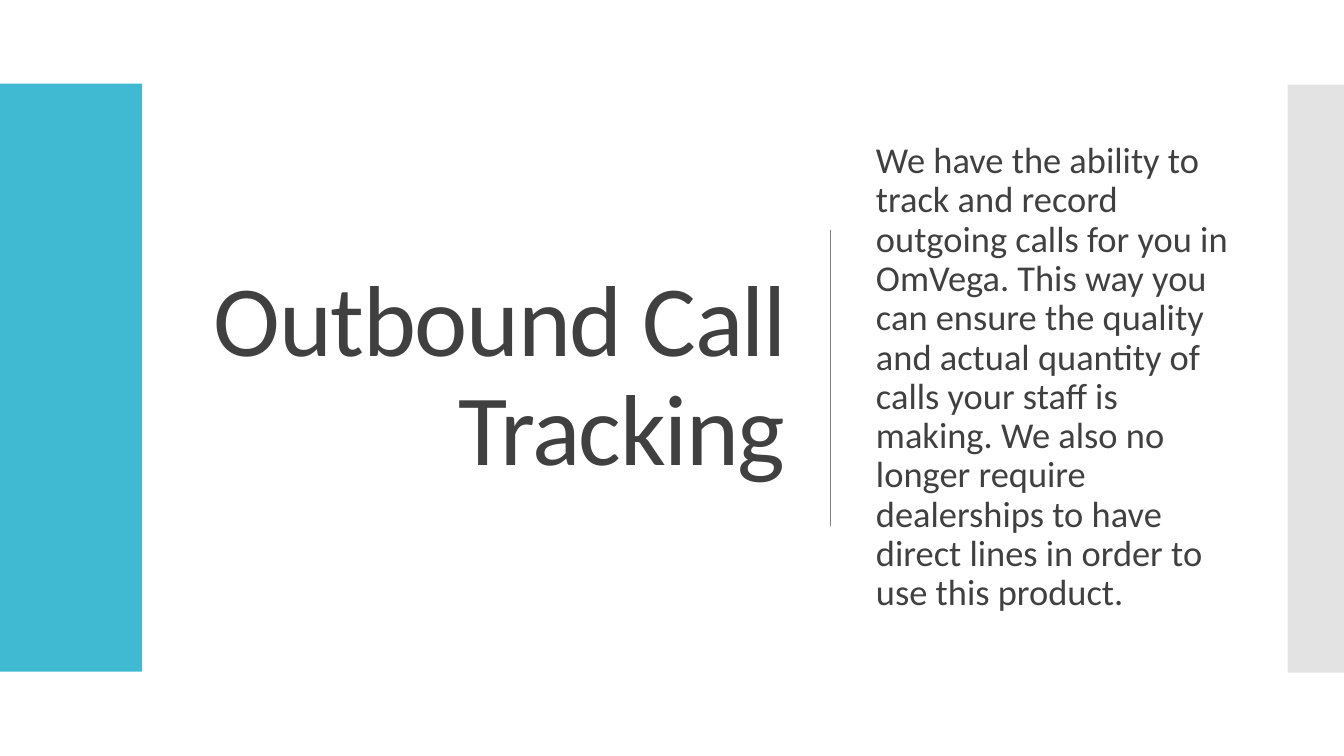
from lxml.etree import SubElement
from pptx import Presentation
from pptx.dml.color import RGBColor
from pptx.enum.shapes import MSO_CONNECTOR, MSO_SHAPE
from pptx.enum.text import MSO_ANCHOR, PP_ALIGN
from pptx.oxml.ns import qn
from pptx.util import Inches, Pt

HEADING = "Outbound Call Tracking"
BODY = (
    "We have the ability to track and record outgoing calls for you in OmVega. "
    "This way you can ensure the quality and actual quantity of calls your staff "
    "is making. We also no longer require dealerships to have direct lines in "
    "order to use this product."
)
COLORS = {"accent": "40BAD2", "side": "C8C8C8", "text": "404040", "rule": "808080"}
FONT = "Calibri"

WIDTH, HEIGHT = Inches(13.33), Inches(7.5)
BAND_HEIGHT = HEIGHT * 7 / 9
TEXT_HEIGHT = Inches(5.13)
TEXT_TOP = (HEIGHT - TEXT_HEIGHT) / 2
RULE_X, RULE_HEIGHT = Inches(8.24), Inches(2.94)
RULE_TOP = (HEIGHT - RULE_HEIGHT) / 2
SIDE_WIDTH = Inches(0.56)
BANDS = [
    (0, Inches(0.83), Inches(1.41), "accent", 100),
    (WIDTH - SIDE_WIDTH, Inches(0.84), SIDE_WIDTH, "side", 50),
]


def add_text(slide, text, left, width, size, align=PP_ALIGN.LEFT, before=0, spacing=0):
    box = slide.shapes.add_textbox(left, int(TEXT_TOP), width, TEXT_HEIGHT)
    frame = box.text_frame
    frame.word_wrap = True
    frame.vertical_anchor = MSO_ANCHOR.MIDDLE
    paragraph = frame.paragraphs[0]
    paragraph.alignment = align
    paragraph.line_spacing = 0.9
    paragraph.space_before = Pt(before)
    run = paragraph.add_run()
    run.text = text
    run.font.name = FONT
    run.font.size = Pt(size)
    run.font.color.rgb = RGBColor.from_string(COLORS["text"])
    if spacing:
        run.font._element.set("spc", str(spacing * 100))


def add_band(slide, left, top, width, color, opacity):
    band = slide.shapes.add_shape(
        MSO_SHAPE.RECTANGLE, left, top, width, int(BAND_HEIGHT)
    )
    band.shadow.inherit = False
    band.fill.solid()
    band.fill.fore_color.rgb = RGBColor.from_string(COLORS[color])
    band.line.fill.background()
    if opacity < 100:
        tint = band._element.spPr.find(f"{qn('a:solidFill')}/{qn('a:srgbClr')}")
        SubElement(tint, qn("a:alpha")).set("val", str(opacity * 1000))


def add_rule(slide):
    rule = slide.shapes.add_connector(
        MSO_CONNECTOR.STRAIGHT,
        RULE_X, int(RULE_TOP), RULE_X, int(RULE_TOP + RULE_HEIGHT),
    )
    rule.line.color.rgb = RGBColor.from_string(COLORS["rule"])
    rule.line.width = Pt(1)
    SubElement(rule._element.spPr, qn("a:effectLst"))


def main():
    deck = Presentation()
    deck.slide_width, deck.slide_height = WIDTH, HEIGHT
    slide = deck.slides.add_slide(deck.slide_layouts[6])
    add_text(slide, HEADING, Inches(1.86), Inches(6.03), 72,
             align=PP_ALIGN.RIGHT, spacing=-1)
    add_text(slide, BODY, Inches(8.59), Inches(3.84), 26, before=12)
    for left, top, width, color, opacity in BANDS:
        add_band(slide, left, top, width, color, opacity)
    add_rule(slide)
    deck.save("out.pptx")


if __name__ == "__main__":
    main()
